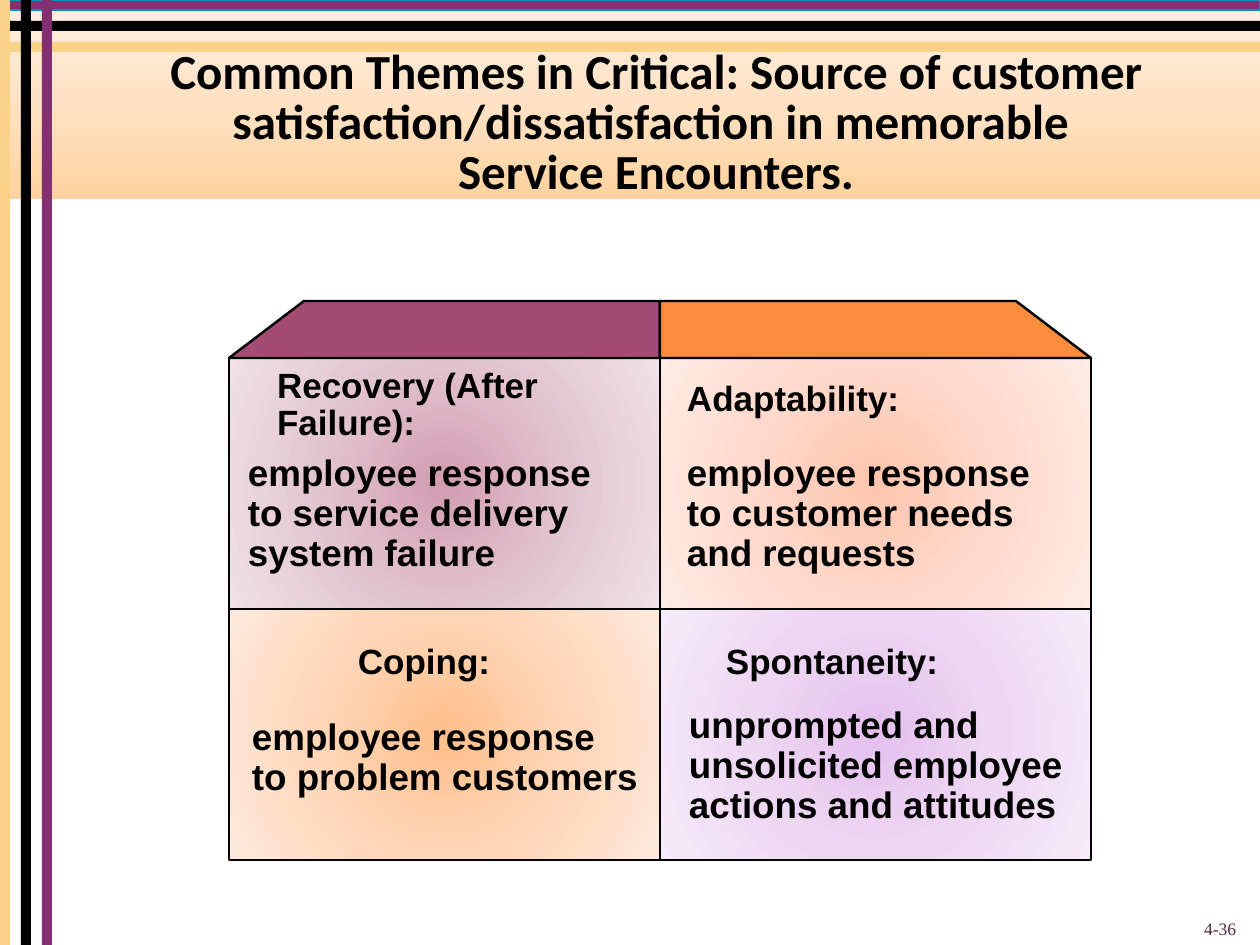
"""Build a slide on four themes in memorable service encounters."""
from dataclasses import dataclass

from lxml import etree
from pptx import Presentation
from pptx.dml.color import RGBColor
from pptx.enum.shapes import MSO_SHAPE
from pptx.enum.text import MSO_ANCHOR, PP_ALIGN
from pptx.oxml import parse_xml
from pptx.oxml.ns import nsdecls, qn
from pptx.util import Emu, Pt

RECTANGLE = MSO_SHAPE.RECTANGLE
TOP, MIDDLE, BOTTOM = MSO_ANCHOR.TOP, MSO_ANCHOR.MIDDLE, MSO_ANCHOR.BOTTOM
LEFT, CENTER, RIGHT = PP_ALIGN.LEFT, PP_ALIGN.CENTER, PP_ALIGN.RIGHT
PX = 914400 / 126
PAGE_WIDTH, PAGE_HEIGHT = 1260, 945
UPWARD = '<a:lin ang="16200000" scaled="0"/>'
FROM_CENTER = ('<a:path path="circle"><a:fillToRect l="50000" t="50000" '
               'r="50000" b="50000"/></a:path>')


@dataclass(frozen=True)
class Theme:
    ink: str = "000000"
    plum: str = "852F73"
    sand: str = "FBD388"
    edge: str = "0391BD"
    page_number: str = "51253A"
    header: tuple = ("FFD3A0", "FFE2C5", "FFF0E3")
    recovery: tuple = ("D29DB1", "E2C4CF", "F0E2E7")
    adaptability: tuple = ("FFC5AE", "FFD9CC", "FFECE5")
    coping: tuple = ("FFBF8B", "FFD6B8", "FEEADD")
    spontaneity: tuple = ("E5C0EE", "EED7F3", "F6EBF9")
    left_roof: str = "A34B73"
    right_roof: str = "FA8D3D"
    title_font: str = "Calibri"
    body_font: str = "Arial"
    number_font: str = "Times New Roman"
    title_size: int = 28
    heading_size: int = 20
    body_size: int = 21
    number_size: int = 10
    outline: float = 1.38


def px(length):
    return Emu(round(length * PX))


class SlideBuilder:
    def __init__(self, page, theme):
        self.page = page
        self.theme = theme

    def paint(self, shape, fill, line=None, line_width=0,
              direction=FROM_CENTER):
        shape.shadow.inherit = False
        if isinstance(fill, tuple):
            stops = "".join(
                f'<a:gs pos="{index * 50000}"><a:srgbClr val="{color}"/></a:gs>'
                for index, color in enumerate(fill))
            gradient = parse_xml(
                f'<a:gradFill {nsdecls("a")} rotWithShape="1">'
                f'<a:gsLst>{stops}</a:gsLst>{direction}</a:gradFill>')
            shape._element.spPr.find(qn("a:prstGeom")).addnext(gradient)
        else:
            shape.fill.solid()
            shape.fill.fore_color.rgb = RGBColor.from_string(fill)
        if line:
            shape.line.color.rgb = RGBColor.from_string(line)
            shape.line.width = Pt(line_width)
        else:
            shape.line.fill.background()

    def rectangle(self, left, top, width, height, fill, **style):
        shape = self.page.shapes.add_shape(
            RECTANGLE, px(left), px(top), px(width), px(height))
        self.paint(shape, fill, **style)

    def polygon(self, points, fill, **style):
        builder = self.page.shapes.build_freeform(*points[0], scale=PX)
        builder.add_line_segments(points[1:], close=True)
        self.paint(builder.convert_to_shape(), fill, **style)

    def text(self, area, lines, font, size, color, bold=True, align=LEFT,
             anchor=TOP, spacing=1.0, wrap=True, insets=(15, 8)):
        box = self.page.shapes.add_textbox(*map(px, area))
        frame = box.text_frame
        frame.word_wrap = wrap
        frame.vertical_anchor = anchor
        frame.margin_left = frame.margin_right = px(insets[0])
        frame.margin_top = frame.margin_bottom = px(insets[1])
        frame.text = "\n".join(lines)
        for para in frame.paragraphs:
            para.alignment = align
            para.line_spacing = spacing
            para.font.name = font
            para.font.size = Pt(size)
            para.font.bold = bold
            para.font.color.rgb = RGBColor.from_string(color)
            for end in para._p.findall(qn("a:br")):
                etree.SubElement(end, qn("a:rPr"), sz=str(size * 100))


def main():
    theme = Theme()
    deck = Presentation()
    deck.slide_width, deck.slide_height = px(PAGE_WIDTH), px(PAGE_HEIGHT)
    page = deck.slides.add_slide(deck.slide_layouts[6])
    builder = SlideBuilder(page, theme)

    builder.rectangle(0, 0, PAGE_WIDTH, 199, theme.header, direction=UPWARD)
    builder.rectangle(0, 0, PAGE_WIDTH, 10, theme.plum, line=theme.edge)
    for top, color in ((42, theme.sand), (21, theme.ink)):
        builder.rectangle(0, top, PAGE_WIDTH, 10, color)
    for left, color in ((42, theme.plum), (0, theme.sand), (21, theme.ink)):
        builder.rectangle(left, 0, 10, PAGE_HEIGHT, color)

    title = ("Common Themes in Critical: Source of customer "
             "satisfaction/dissatisfaction in memorable \vService Encounters.")
    builder.text((73, 50, 1166, 150), [title], theme.title_font,
                 theme.title_size, theme.ink, align=CENTER, anchor=MIDDLE,
                 spacing=0.85, insets=(13, 6))

    outline = {"line": theme.ink, "line_width": theme.outline}
    grid_left, grid_top, cell_width, cell_height = 229, 358, 431, 251
    fills = (theme.recovery, theme.adaptability,
             theme.coping, theme.spontaneity)
    for index, fill in enumerate(fills):
        row, column = divmod(index, 2)
        builder.rectangle(grid_left + column * cell_width,
                          grid_top + row * cell_height,
                          cell_width, cell_height, fill, **outline)

    middle, roof_top, slope = grid_left + cell_width, 301, 75
    for side, color in ((-1, theme.left_roof), (1, theme.right_roof)):
        outer = middle + side * cell_width
        builder.polygon([(outer - side * slope, roof_top), (middle, roof_top),
                         (middle, grid_top), (outer, grid_top)],
                        color, **outline)

    headings = (
        ((262, 360, 334, 91), "Recovery (After Failure):", True),
        ((672, 373, 384, 53), "Adaptability:", True),
        ((711, 636, 243, 53), "Spontaneity:", False),
        ((343, 636, 164, 53), "Coping:", False),
    )
    for area, heading, wrap in headings:
        builder.text(area, [heading], theme.body_font, theme.heading_size,
                     theme.ink, spacing=0.9, wrap=wrap)

    descriptions = (
        ((233, 447, 418, 139), True,
         ("employee response", "to service delivery", "system failure")),
        ((672, 447, 415, 139), True,
         ("employee response", "to customer needs", "and requests")),
        ((237, 711, 418, 97), False,
         ("employee response", "to problem customers")),
        ((674, 699, 406, 139), False,
         ("unprompted and", "unsolicited employee", "actions and attitudes")),
    )
    for area, wrap, lines in descriptions:
        builder.text(area, lines, theme.body_font, theme.body_size,
                     theme.ink, spacing=0.9, wrap=wrap)

    builder.text((955, 882, 294, 63), ["4-36"], theme.number_font,
                 theme.number_size, theme.page_number, bold=False,
                 align=RIGHT, anchor=BOTTOM, insets=(13, 6))
    deck.save("out.pptx")


if __name__ == "__main__":
    main()
